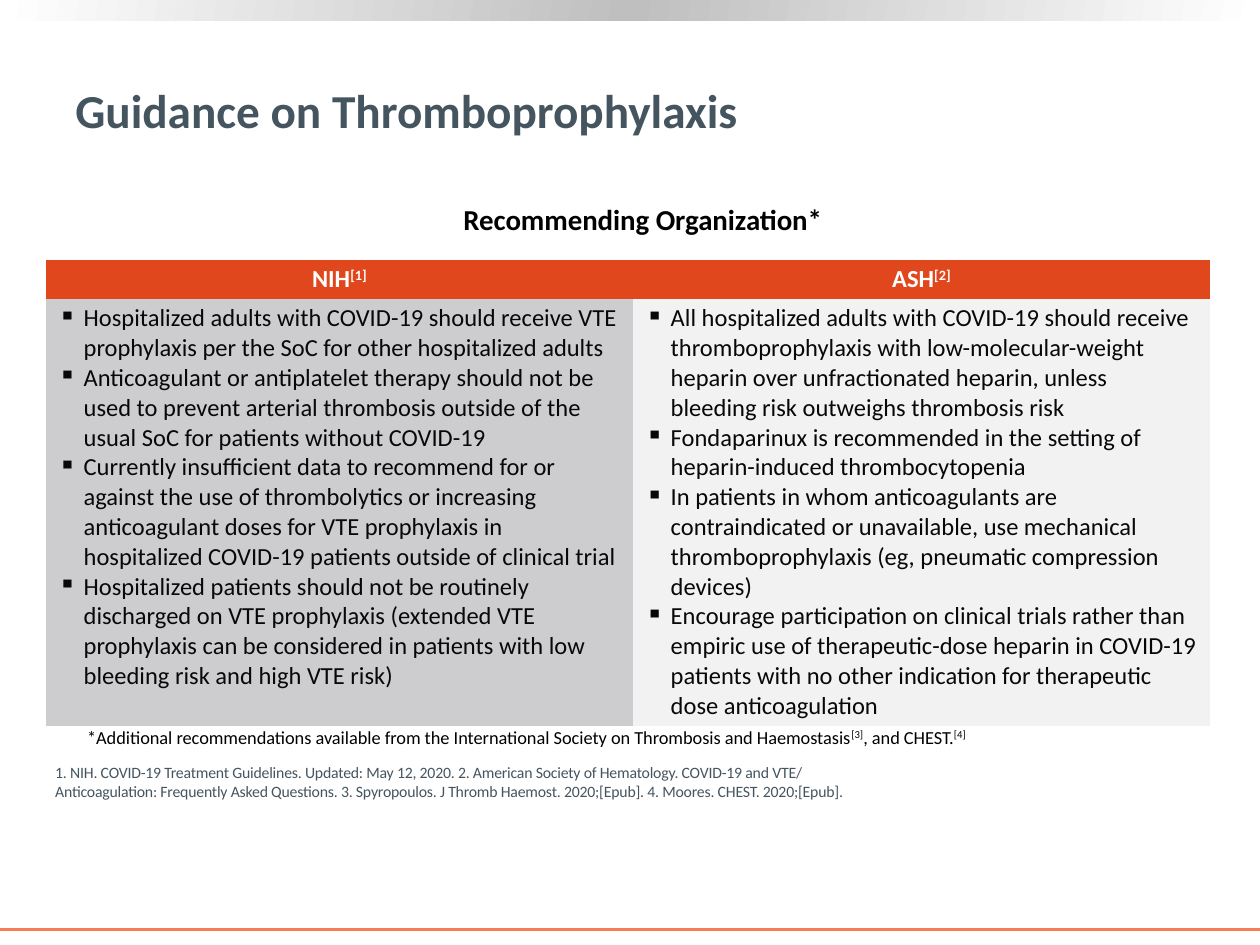
from copy import deepcopy

from lxml.etree import SubElement
from pptx import Presentation
from pptx.dml.color import RGBColor
from pptx.enum.shapes import MSO_CONNECTOR, MSO_SHAPE
from pptx.enum.text import MSO_ANCHOR, PP_ALIGN
from pptx.oxml.ns import qn
from pptx.util import Pt

WIDE, HIGH = 720, 540
SLATE, BLACK, WHITE = "455560", "000000", "FFFFFF"
PLAIN = "{2D5ABB26-0587-4C30-8999-92F81FD0307C}"
NIH = [
    "Hospitalized adults with COVID-19 should receive VTE prophylaxis per the SoC for other hospitalized adults",
    "Anticoagulant or antiplatelet therapy should not be used to prevent arterial thrombosis outside of the usual SoC for patients without COVID-19",
    "Currently insufficient data to recommend for or against the use of thrombolytics or increasing anticoagulant doses for VTE prophylaxis in hospitalized COVID-19 patients outside of clinical trial",
    "Hospitalized patients should not be routinely discharged on VTE prophylaxis (extended VTE prophylaxis can be considered in patients with low bleeding risk and high VTE risk)",
]
ASH = [
    "All hospitalized adults with COVID-19 should receive thromboprophylaxis with low-molecular-weight heparin over unfractionated heparin, unless bleeding risk outweighs thrombosis risk",
    "Fondaparinux is recommended in the setting of heparin-induced thrombocytopenia",
    "In patients in whom anticoagulants are contraindicated or unavailable, use mechanical thromboprophylaxis (eg, pneumatic compression devices)",
    "Encourage participation on clinical trials rather than empiric use of therapeutic-dose heparin in COVID-19 patients with no other indication for therapeutic dose anticoagulation",
]
NOTE = [
    "*Additional recommendations available from the International Society on Thrombosis and Haemostasis",
    "[3]", ", and CHEST.", "[4]",
]
REFS = (
    "1. NIH. COVID-19 Treatment Guidelines. Updated: May 12, 2020. "
    "2. American Society of Hematology. COVID-19 and VTE/ Anticoagulation: Frequently Asked Questions. "
    "3. Spyropoulos. J Thromb Haemost. 2020;[Epub]. 4. Moores. CHEST. 2020;[Epub]."
)


def tint(code):
    """Return the colour for a hex string."""
    return RGBColor.from_string(code)


def apply(item, **look):
    """Set each given attribute on an item."""
    for name, value in look.items():
        setattr(item, name, value)


def write(para, parts, size, hue, bold=False, space=0):
    """Fill a paragraph with runs, raising every second part."""
    for i, part in enumerate(parts):
        run = para.add_run()
        apply(run, text=part)
        apply(run.font, name="Calibri", size=Pt(size), bold=bold)
        run.font.color.rgb = tint(hue)
        props = run._r.get_or_add_rPr()
        if i % 2:
            props.set("baseline", "30000")
        if space:
            props.set("spc", str(space))


def bullet(para):
    """Give a paragraph a square bullet and a hanging indent."""
    props = para._p.get_or_add_pPr()
    apply_xml = {"marL": Pt(14.4), "indent": -Pt(14.4)}
    for name, value in apply_xml.items():
        props.set(name, str(int(value)))
    SubElement(props, qn("a:buChar")).set("char", "▪")


def label(slide, box, parts, size, hue, anchor=MSO_ANCHOR.TOP,
          align=PP_ALIGN.LEFT, **look):
    """Place one line or block of text in a box."""
    frame = slide.shapes.add_textbox(*map(Pt, box)).text_frame
    apply(frame, word_wrap=True, vertical_anchor=anchor)
    para = frame.paragraphs[0]
    apply(para, alignment=align)
    write(para, parts, size, hue, **look)


def band(slide, box):
    """Draw the grey band that fades out to both sides."""
    bar = slide.shapes.add_shape(MSO_SHAPE.RECTANGLE, *map(Pt, box))
    bar.shadow.inherit = False
    bar.line.fill.background()
    bar.fill.gradient()
    bar.fill.gradient_angle = 170
    first = bar.fill.gradient_stops[0]._gs
    first.addnext(deepcopy(first))
    fades = [(0, WHITE), (0.5, "BFBFBF"), (1, WHITE)]
    for stop, (place, hue) in zip(bar.fill.gradient_stops, fades):
        stop.position = place
        stop.color.rgb = tint(hue)


def rule(slide, box):
    """Draw the orange line along the top of a box."""
    left, top, width, _ = box
    line = slide.shapes.add_connector(
        MSO_CONNECTOR.STRAIGHT, Pt(left), Pt(top), Pt(left + width), Pt(top))
    line.line.color.rgb = tint("F47D55")
    line.line.width = Pt(1.5)
    SubElement(line._element.spPr, qn("a:effectLst"))


def paint(cell, hue, anchor):
    """Set the fill, margins and anchor of a cell."""
    cell.fill.solid()
    cell.fill.fore_color.rgb = tint(hue)
    apply(cell, vertical_anchor=anchor, margin_left=Pt(7.2),
          margin_right=Pt(7.2), margin_top=Pt(2.7), margin_bottom=Pt(2.7))


def grid(slide, box):
    """Build the table with one column for each organization."""
    left, top, width, height = box
    table = slide.shapes.add_table(2, 2, *map(Pt, box)).table
    table._tbl.tblPr.find(qn("a:tableStyleId")).text = PLAIN
    apply(table, horz_banding=False)
    apply(table.rows[0], height=Pt(22))
    apply(table.rows[1], height=Pt(height - 22))
    first = 335.5
    cols = [
        (first, ["NIH", "[1]"], NIH, "CDCDCF"),
        (width - first, ["ASH", "[2]"], ASH, "F2F2F2"),
    ]
    for i, (span, name, points, hue) in enumerate(cols):
        apply(table.columns[i], width=Pt(span))
        head, body = table.cell(0, i), table.cell(1, i)
        paint(head, "E1471D", MSO_ANCHOR.MIDDLE)
        para = head.text_frame.paragraphs[0]
        apply(para, alignment=PP_ALIGN.CENTER)
        write(para, name, 14, WHITE, bold=True)
        paint(body, hue, MSO_ANCHOR.TOP)
        frame = body.text_frame
        for j, point in enumerate(points):
            para = frame.add_paragraph() if j else frame.paragraphs[0]
            bullet(para)
            write(para, [point], 14, "07080A")


def main():
    """Build the slide and save it."""
    deck = Presentation()
    apply(deck, slide_width=Pt(WIDE), slide_height=Pt(HIGH))
    slide = deck.slides.add_slide(deck.slide_layouts[6])
    band(slide, (0, 0, WIDE, 11.5))
    rule(slide, (0, 531.2, WIDE, 0))
    label(slide, (36, 19, 642, 87), ["Guidance on Thromboprophylaxis"], 27,
          SLATE, MSO_ANCHOR.MIDDLE, bold=True)
    grid(slide, (26.2, 148.5, 665.3, 266))
    label(slide, (24.5, 432, 479.5, 29), [REFS], 9, SLATE,
          MSO_ANCHOR.BOTTOM, space=-10)
    label(slide, (42.7, 411.2, 627, 20), NOTE, 10.5, BLACK)
    label(slide, (41.8, 111.8, 651, 27.4), ["Recommending Organization*"],
          16.5, BLACK, align=PP_ALIGN.CENTER, bold=True)
    deck.save("out.pptx")


if __name__ == "__main__":
    main()
